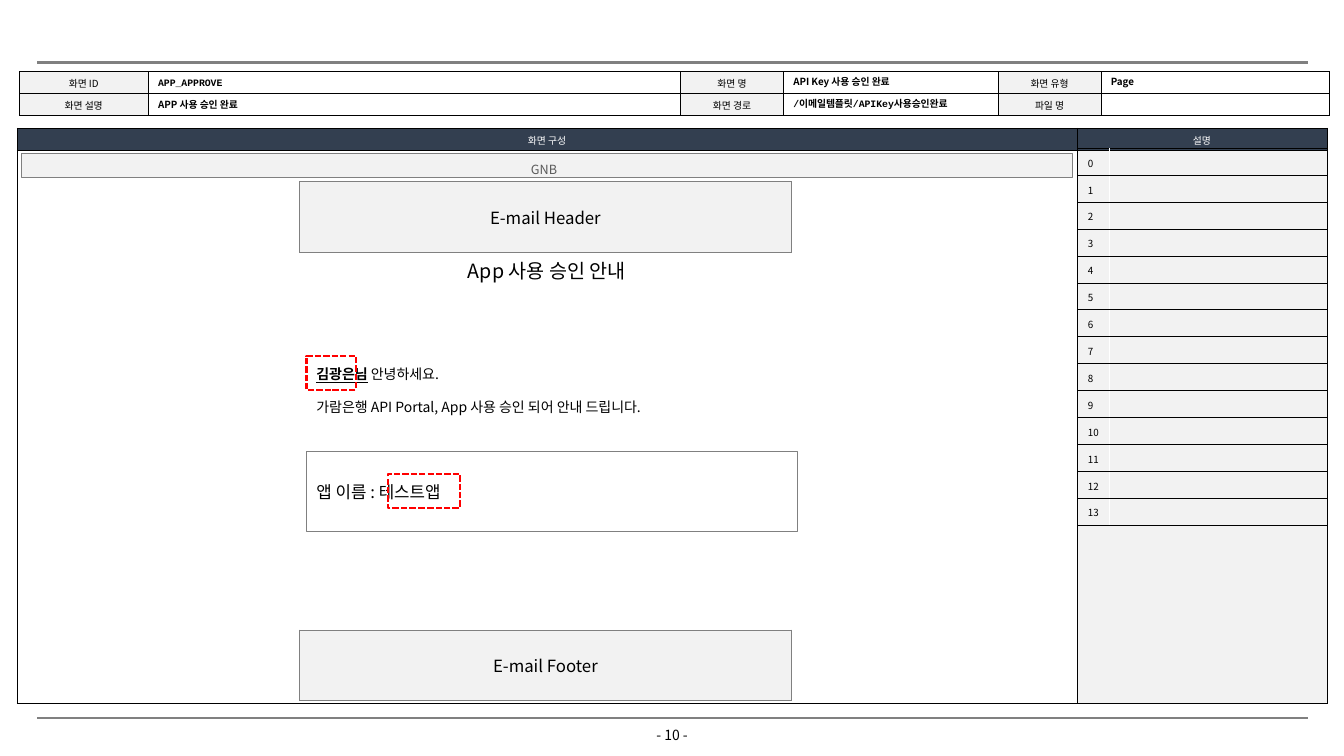
from dataclasses import dataclass

from lxml.etree import SubElement
from pptx import Presentation
from pptx.dml.color import RGBColor
from pptx.enum.dml import MSO_LINE
from pptx.enum.shapes import MSO_CONNECTOR, MSO_SHAPE
from pptx.enum.text import MSO_ANCHOR, PP_ALIGN
from pptx.oxml.ns import qn
from pptx.util import Inches, Pt

COLORS = {"black": "000000", "white": "FFFFFF", "navy": "333F50", "pale": "F2F2F2",
          "gray": "808080", "label": "595959", "red": "FF0000"}
SANS = "Noto Sans CJK KR"
MONO = "Courier New"
NO_STYLE = "{2D5ABB26-0587-4C30-8999-92F81FD0307C}"


@dataclass
class Box:
    left: float
    top: float
    width: float
    height: float

    def emu(self) -> list:
        return [Inches(v) for v in (self.left, self.top, self.width, self.height)]


@dataclass
class Cell:
    text: str = ""
    fill: str = ""
    color: str = "black"


@dataclass
class Grid:
    left: float
    top: float
    widths: list
    heights: list
    rows: list
    column_borders: list
    size: float = 7
    align: PP_ALIGN = PP_ALIGN.CENTER
    anchor: MSO_ANCHOR = MSO_ANCHOR.TOP
    margins: tuple = (0.12, 0.05)
    line_spacing: object = None


@dataclass
class Panel:
    box: Box
    fill: str
    line: str
    weight: float
    dashed: bool = False


@dataclass
class HeaderValue:
    box: Box
    text: str
    font: str = SANS


def color_of(name: str) -> RGBColor:
    return RGBColor.from_string(COLORS[name])


def write(paragraph, text: str, *, size=7, color="black", font=SANS, bold=False,
          underline=False, align=PP_ALIGN.LEFT, line_spacing=None, before=None) -> None:
    paragraph.alignment = align
    if line_spacing:
        paragraph.line_spacing = line_spacing
    if before:
        paragraph.space_before = Pt(before)
    if not text:
        SubElement(paragraph._p, qn("a:endParaRPr"), sz=str(size * 100))
        return
    run = paragraph.add_run()
    run.text = text
    run.font.size = Pt(size)
    run.font.bold = bold
    run.font.underline = underline
    run.font.color.rgb = color_of(color)
    run.font.name = font
    SubElement(run.font._element, qn("a:ea"), typeface=SANS)


def set_frame(frame, *, insets=(0.1, 0.05, 0.1, 0.05), anchor=MSO_ANCHOR.TOP, wrap=True):
    frame.word_wrap = wrap
    frame.vertical_anchor = anchor
    (frame.margin_left, frame.margin_top,
     frame.margin_right, frame.margin_bottom) = [Inches(v) for v in insets]
    return frame.paragraphs[0]


def add_text(slide, box: Box, **frame_format):
    frame = slide.shapes.add_textbox(*box.emu()).text_frame
    set_frame(frame, **frame_format)
    return frame


def add_panel(slide, panel: Panel):
    shape = slide.shapes.add_shape(MSO_SHAPE.RECTANGLE, *panel.box.emu())
    shape.shadow.inherit = False
    if panel.fill:
        shape.fill.solid()
        shape.fill.fore_color.rgb = color_of(panel.fill)
    else:
        shape.fill.background()
    shape.line.color.rgb = color_of(panel.line)
    shape.line.width = Pt(panel.weight)
    if panel.dashed:
        shape.line.dash_style = MSO_LINE.SQUARE_DOT
    return shape


def add_rule(slide, top: float) -> None:
    rule = slide.shapes.add_connector(
        MSO_CONNECTOR.STRAIGHT, Inches(0.37), Inches(top), Inches(12.97), Inches(top))
    rule.line.color.rgb = color_of("gray")
    rule.line.width = Pt(1.5)
    SubElement(rule._element.spPr, qn("a:effectLst"))


def edges(color: str, weight: float, sides: str = "LRTB") -> dict:
    return {side: (color, weight) for side in sides}


def set_borders(cell, borders: dict) -> None:
    properties = cell._tc.get_or_add_tcPr()
    for position, side in enumerate("LRTB"):
        color, weight = borders.get(side, ("", 0))
        line = properties.makeelement(qn(f"a:ln{side}"), {"w": str(Pt(weight))})
        properties.insert(position, line)
        if color:
            fill = SubElement(line, qn("a:solidFill"))
            SubElement(fill, qn("a:srgbClr"), val=COLORS[color])
        else:
            SubElement(line, qn("a:noFill"))


def add_grid(slide, grid: Grid) -> None:
    box = Box(grid.left, grid.top, sum(grid.widths), sum(grid.heights))
    table = slide.shapes.add_table(len(grid.heights), len(grid.widths), *box.emu()).table
    table.first_row = table.horz_banding = False
    table._tbl.tblPr.find(qn("a:tableStyleId")).text = NO_STYLE
    for column, width in zip(table.columns, grid.widths):
        column.width = Inches(width)
    for row, height, contents in zip(table.rows, grid.heights, grid.rows):
        row.height = Inches(height)
        for cell, content, borders in zip(row.cells, contents, grid.column_borders):
            cell.margin_left = cell.margin_right = Inches(grid.margins[0])
            cell.margin_top = cell.margin_bottom = Inches(grid.margins[1])
            cell.vertical_anchor = grid.anchor
            if content.fill:
                cell.fill.solid()
                cell.fill.fore_color.rgb = color_of(content.fill)
            else:
                cell.fill.background()
            set_borders(cell, borders)
            write(cell.text_frame.paragraphs[0], content.text, size=grid.size,
                  color=content.color, align=grid.align, line_spacing=grid.line_spacing)


def main() -> None:
    deck = Presentation()
    deck.slide_width, deck.slide_height = Inches(13.33), Inches(7.5)
    slide = deck.slides.add_slide(deck.slide_layouts[6])
    center, middle = PP_ALIGN.CENTER, MSO_ANCHOR.MIDDLE
    add_rule(slide, 0.62)
    add_grid(slide, Grid(0.37, 7.12, [6.3, 6.3], [0.4], [[Cell(), Cell()]],
                         [edges("gray", 1.5, "T")] * 2))
    page = add_text(slide, Box(6.12, 7.21, 1.09, 0.17), insets=(0, 0, 0, 0))
    write(page.paragraphs[0], "- 10 -", size=10, align=center)

    black_box, gray_box = edges("black", 0.25), edges("gray", 0.5)
    titles = [Cell(text, "navy", "white") for text in ("화면 구성", "설명")]
    add_grid(slide, Grid(0.17, 1.27, [10.51, 2.48], [0.22, 5.49],
                         [titles, [Cell(), Cell(fill="pale")]], [black_box] * 2))
    labels = [("화면 ID", "화면 명", "화면 유형"), ("화면 설명", "화면 경로", "파일 명")]
    label_rows = [[cell for text in row for cell in (Cell(text, "pale"), Cell())]
                  for row in labels]
    add_grid(slide, Grid(0.19, 0.71, [1.28, 5.28, 1.02, 2.13, 1.02, 2.26], [0.21, 0.22],
                         label_rows, [black_box] * 6))
    for value in (HeaderValue(Box(1.47, 0.7, 5.24, 0.24), "APP_APPROVE", MONO),
                  HeaderValue(Box(1.47, 0.93, 5.25, 0.22), "APP 사용 승인 완료"),
                  HeaderValue(Box(7.77, 0.7, 2.13, 0.21), "API Key 사용 승인 완료"),
                  HeaderValue(Box(7.77, 0.91, 2.13, 0.23), "/이메일템플릿/APIKey사용승인완료", MONO),
                  HeaderValue(Box(10.92, 0.7, 2.26, 0.22), "Page")):
        frame = add_text(slide, value.box, insets=(0.1, 0, 0.1, 0), anchor=middle)
        write(frame.paragraphs[0], value.text, font=value.font, bold=True)

    row_lines = edges("black", 0.25, "TB")
    number_borders = [row_lines | edges("white", 0.5, side) for side in "RL"]
    add_grid(slide, Grid(10.69, 1.47, [0.31, 2.16], [3.45 / 14] * 14,
                         [[Cell(str(number)), Cell()] for number in range(14)],
                         number_borders, align=PP_ALIGN.LEFT, margins=(0.1, 0.05),
                         line_spacing=Pt(12)))

    gnb = add_panel(slide, Panel(Box(0.21, 1.52, 10.43, 0.24), "pale", "gray", 0.75))
    write(set_frame(gnb.text_frame, insets=(0.04, 0.05, 0.1, 0.05), anchor=middle), "GNB",
          size=9, color="label", align=center, line_spacing=1.5)
    heading = add_text(slide, Box(4.45, 2.52, 1.95, 0.34), wrap=False)
    write(heading.paragraphs[0], "App 사용 승인 안내", size=14, align=center)
    greeting = add_text(slide, Box(3.04, 3.58, 5.2, 0.61))
    write(greeting.paragraphs[0], "김광은님", size=10, bold=True, underline=True)
    write(greeting.paragraphs[0], " 안녕하세요.", size=10)
    write(greeting.add_paragraph(), "가람은행 API Portal, App 사용 승인 되어 안내 드립니다.",
          size=10, before=11.5)
    for top, text in ((1.8, "E-mail Header"), (6.25, "E-mail Footer")):
        add_grid(slide, Grid(2.97, top, [4.88], [0.7], [[Cell(text, "pale")]], [gray_box],
                             size=12, anchor=middle, margins=(0.09, 0.07)))
    add_panel(slide, Panel(Box(3.04, 3.53, 0.49, 0.34), "", "red", 1.5, True))
    app = add_panel(slide, Panel(Box(3.04, 4.48, 4.87, 0.79), "white", "gray", 0.25))
    write(set_frame(app.text_frame, anchor=middle, wrap=False), "앱 이름 : 테스트앱", size=12)
    add_panel(slide, Panel(Box(3.85, 4.7, 0.71, 0.34), "", "red", 1.5, True))
    deck.save("out.pptx")


if __name__ == "__main__":
    main()
